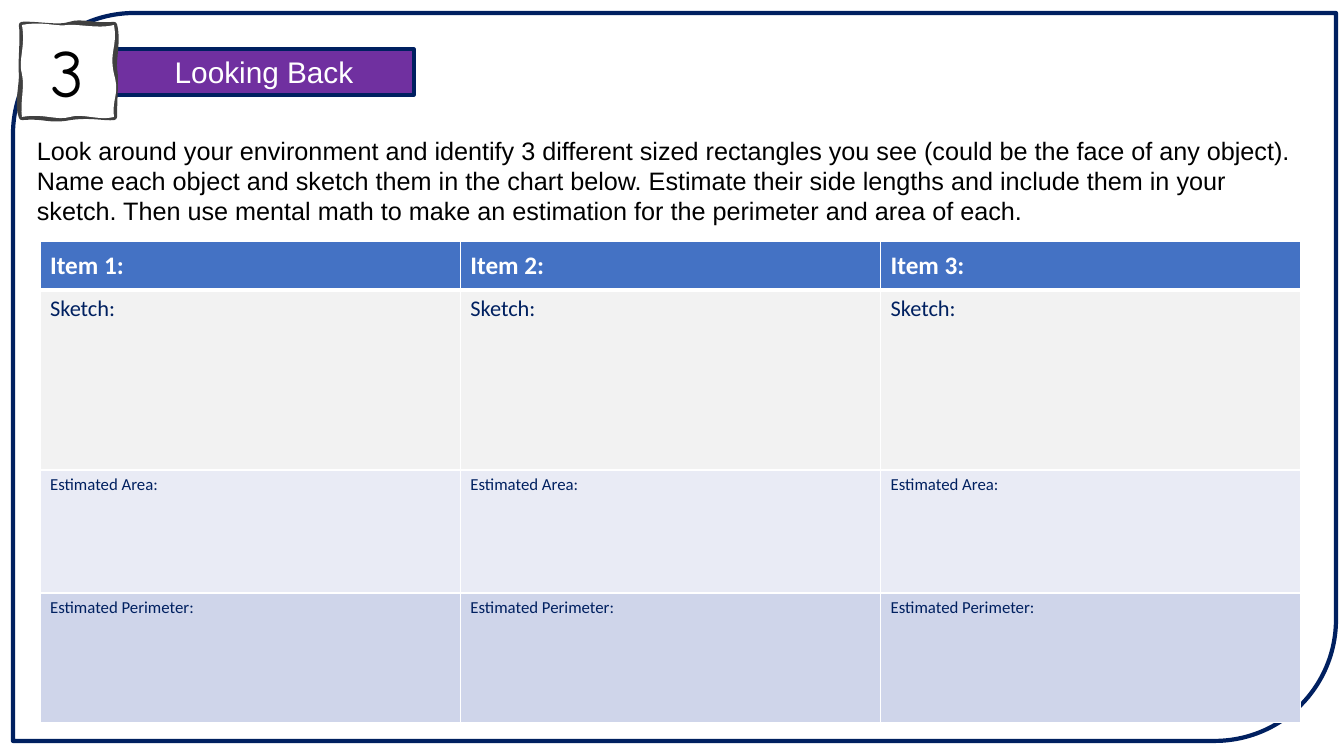
import pptx
import pptx.util
import pptx.dml.color
import pptx.enum.shapes
import pptx.enum.text
import pptx.oxml
import pptx.oxml.ns

RGB = pptx.dml.color.RGBColor
NAVY = RGB(0x00, 0x20, 0x60)
PURPLE = RGB(0x70, 0x30, 0xA0)
WHITE = RGB(0xFF, 0xFF, 0xFF)
BLACK = RGB(0x00, 0x00, 0x00)
GREY = RGB(0x40, 0x40, 0x40)
BLUE = RGB(0x44, 0x72, 0xC4)
PALE = RGB(0xF2, 0xF2, 0xF2)
LIGHT = RGB(0xE9, 0xEB, 0xF5)
MID = RGB(0xCF, 0xD5, 0xEA)

TITLE = "Looking Back"
NUMBER = "3"
TASK = ("Look around your environment and identify 3 different sized rectangles "
        "you see (could be the face of any object). Name each object and sketch "
        "them in the chart below. Estimate their side lengths and include them in "
        "your sketch. Then use mental math to make an estimation for the perimeter "
        "and area of each.")
COLS = 3
# label, height in px, text size, fill, text colour
ROWS = [
    ("Item {}:", 49, 18, BLUE, WHITE),
    ("Sketch:", 180, 16, PALE, NAVY),
    ("Estimated Area:", 123, 12, LIGHT, NAVY),
    ("Estimated Perimeter:", 130, 12, MID, NAVY),
]

# Wavy squares: a start point, then cubic curves as (control, control, end)
START = (22, 25)
EDGE = [
    ((36, 24), (59, 29), (70, 25)), ((81, 21), (94, 27), (114, 25)),
    ((118, 40), (113, 59), (114, 69)), ((116, 78), (114, 96), (114, 117)),
    ((104, 118), (91, 114), (70, 117)), ((49, 121), (45, 115), (22, 117)),
    ((17, 105), (23, 83), (22, 73)), ((21, 62), (24, 35), (22, 25)),
]
FACE = [
    ((43, 21), (57, 27), (68, 25)), ((78, 24), (100, 29), (114, 25)),
    ((118, 46), (109, 51), (114, 74)), ((120, 95), (112, 97), (114, 117)),
    ((98, 121), (83, 113), (70, 117)), ((57, 121), (43, 113), (22, 117)),
    ((20, 102), (25, 88), (22, 74)), ((18, 59), (26, 47), (22, 25)),
]


def px(n):
    return round(n * 914400 / 100.8)


def box(*sides):
    return [px(n) for n in sides]


def style(shape, fill=None, line=None, width=0):
    if fill is None:
        shape.fill.background()
    else:
        shape.fill.solid()
        shape.fill.fore_color.rgb = fill
    shape.line.color.rgb = line
    shape.line.width = pptx.util.Pt(width)


def write(frame, text, size, name, color, bold=False):
    frame.text = text
    para = frame.paragraphs[0]
    font = para.font
    font.size, font.name, font.bold = pptx.util.Pt(size), name, bold
    font.color.rgb = color
    return para


def center(frame, para):
    frame.auto_size = pptx.enum.text.MSO_AUTO_SIZE.NONE
    frame.vertical_anchor = pptx.enum.text.MSO_ANCHOR.MIDDLE
    para.alignment = pptx.enum.text.PP_ALIGN.CENTER


def curve(shape, curves, flag):
    """Return a path of cubic curves, placed relative to the shape."""
    def point(spot):
        x, y = box(*spot)
        return f'<a:pt x="{x - shape.left}" y="{y - shape.top}"/>'

    bends = "".join(
        f'<a:cubicBezTo>{"".join(map(point, bend))}</a:cubicBezTo>'
        for bend in curves)
    return pptx.oxml.parse_xml(
        f'<a:path {pptx.oxml.ns.nsdecls("a")} w="{shape.width}" '
        f'h="{shape.height}" {flag}><a:moveTo>{point(START)}</a:moveTo>'
        f'{bends}<a:close/></a:path>')


def wave(shapes):
    """Add one shape with a stroked wavy edge under a filled wavy face."""
    pen = shapes.build_freeform(*box(*START))
    pen.add_line_segments([box(*bend[-1]) for bend in EDGE], close=True)
    shape = pen.convert_to_shape()
    shape.shadow.inherit = False
    paths = shape._element.spPr.find(".//" + pptx.oxml.ns.qn("a:pathLst"))
    paths[:] = [curve(shape, EDGE, 'fill="none"'),
                curve(shape, FACE, 'stroke="0"')]
    return shape


def border(cell, **widths):
    """Draw white cell borders; widths are points keyed by side L, R, T, B."""
    props = cell._tc.get_or_add_tcPr()
    for spot, (side, width) in enumerate(widths.items()):
        props.insert(spot, pptx.oxml.parse_xml(
            f'<a:ln{side} {pptx.oxml.ns.nsdecls("a")} w="{pptx.util.Pt(width)}">'
            f'<a:solidFill><a:srgbClr val="{WHITE}"/></a:solidFill></a:ln{side}>'))


def main():
    deck = pptx.Presentation()
    deck.slide_width, deck.slide_height = box(1344, 756)
    slide = deck.slides.add_slide(deck.slide_layouts[5])
    shapes = slide.shapes

    title = shapes.title
    title.left, title.top, title.width, title.height = box(114, 49, 300, 46)
    style(title, PURPLE, NAVY, 2.25)
    para = write(title.text_frame, TITLE, 21.3, "Arial", WHITE)
    center(title.text_frame, para)

    kind = pptx.enum.shapes.MSO_SHAPE.ROUND_2_DIAG_RECTANGLE
    frame = shapes.add_shape(kind, *box(13, 13, 1323, 728))
    frame.shadow.inherit = False
    style(frame, line=NAVY, width=3)

    badge = wave(shapes)
    style(badge, WHITE, GREY, 4.5)
    para = write(badge.text_frame, NUMBER, 48, "Comic Neue", BLACK)
    center(badge.text_frame, para)

    task = shapes.add_textbox(*box(27, 130, 1295, 102)).text_frame
    task.word_wrap = True
    write(task, TASK, 18, "Arial", BLACK)

    high = sum(row[1] for row in ROWS)
    table = shapes.add_table(len(ROWS), COLS, *box(40, 241, 1261, high)).table
    for r, (label, height, size, fill, color) in enumerate(ROWS):
        head = r == 0
        table.rows[r].height = px(height)
        for c in range(COLS):
            cell = table.cell(r, c)
            cell.fill.solid()
            cell.fill.fore_color.rgb = fill
            write(cell.text_frame, label.format(c + 1), size, "Calibri", color, head)
            if head:
                cell.vertical_anchor = pptx.enum.text.MSO_ANCHOR.MIDDLE
            border(cell, L=1, R=1, T=3 if r == 1 else 1, B=3 if head else 1)

    deck.save("out.pptx")


if __name__ == "__main__":
    main()
